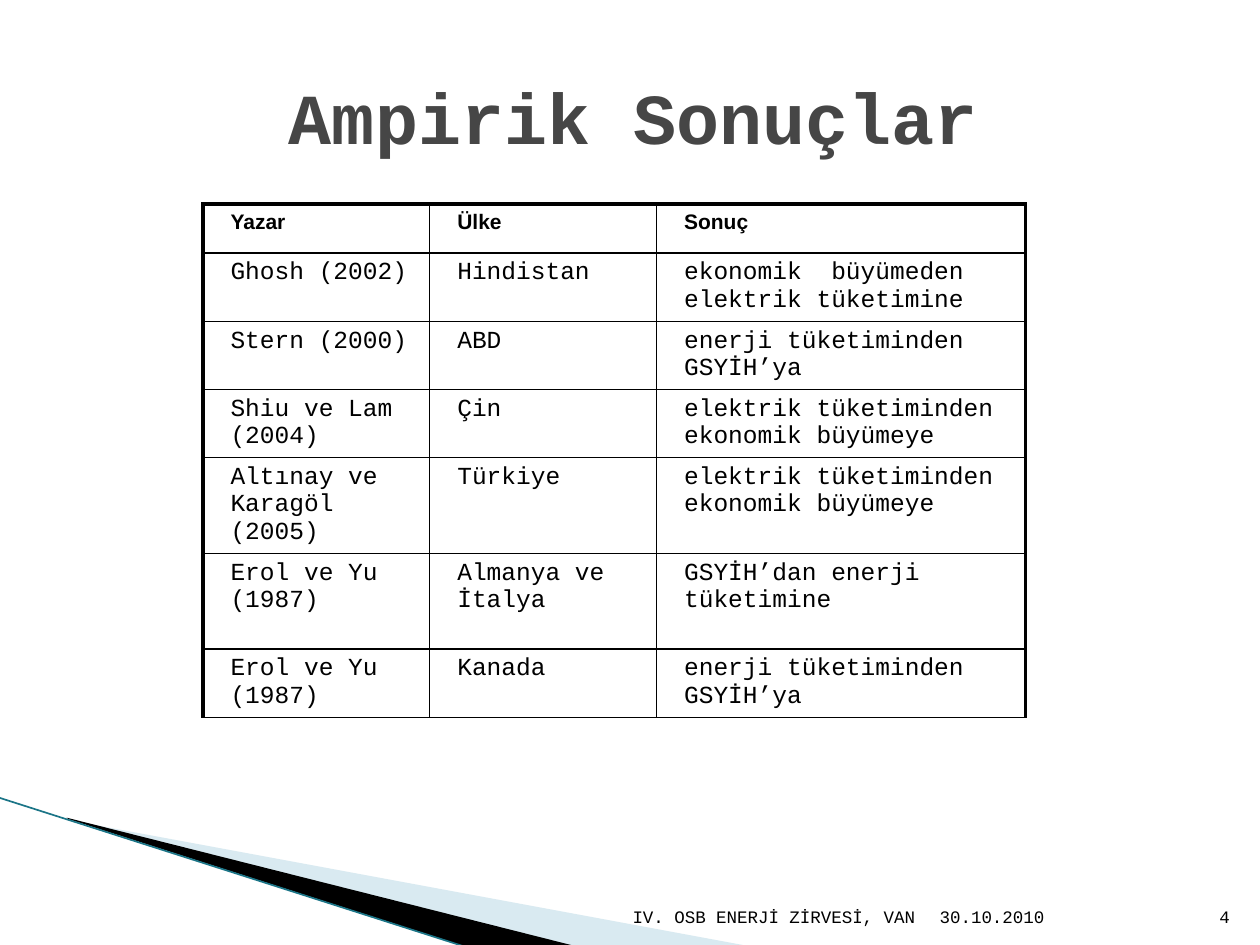
from dataclasses import dataclass, field

from lxml import etree
from pptx import Presentation
from pptx.dml.color import RGBColor
from pptx.enum.text import MSO_ANCHOR, PP_ALIGN
from pptx.oxml.ns import qn
from pptx.util import Inches, Pt

LEFT, MID, RIGHT = PP_ALIGN.LEFT, PP_ALIGN.CENTER, PP_ALIGN.RIGHT
CENTRE, BASE = MSO_ANCHOR.MIDDLE, MSO_ANCHOR.BOTTOM
BLACK = "000000"
MONO = {"name": "Courier New", "size": Pt(14), "bold": False}
HEAD = {"name": "Arial", "size": Pt(12), "bold": True}
SMALL = MONO | {"size": Pt(10)}
TITLE = MONO | {"size": Pt(41), "bold": True}
THIN, THICK = 1, 2.25


@dataclass
class Label:
    text: str
    box: tuple
    align: PP_ALIGN
    anchor: MSO_ANCHOR = BASE
    color: str = BLACK
    style: dict = field(default_factory=lambda: SMALL)


@dataclass
class Wedge:
    points: list
    color: str
    alpha: int = 100


LABELS = [
    Label("Ampirik Sonuçlar", (0.53, 0.29, 9, 1.25), MID, CENTRE, "464646", TITLE),
    Label("4", (9.46, 7.01, 0.4, 0.4), RIGHT),
    Label("IV. OSB ENERJİ ZİRVESİ, VAN", (4.79, 7.01, 2.57, 0.4), RIGHT),
    Label("30.10.2010", (7.36, 7.01, 2.1, 0.4), LEFT),
]
WEDGES = [
    Wedge([(0.55, 6.51), (5.95, 7.51), (4.56, 7.51), (0.55, 6.5)], "A0CBDC", 40),
    Wedge([(0.53, 6.49), (4.57, 7.51), (3.72, 7.52), (0.54, 6.5)], BLACK),
]
COLS = [1.8, 1.8, 2.93]
TALL = [0.39, 0.54, 0.54, 0.54, 0.76, 0.76, 0.54]
ROWS = [
    ("Yazar", "Ülke", "Sonuç"),
    ("Ghosh (2002)", "Hindistan", "ekonomik  büyümeden elektrik tüketimine"),
    ("Stern (2000)", "ABD", "enerji tüketiminden GSYİH’ya"),
    ("Shiu ve Lam (2004)", "Çin", "elektrik tüketiminden ekonomik büyümeye"),
    ("Altınay ve Karagöl (2005)", "Türkiye", "elektrik tüketiminden ekonomik büyümeye"),
    ("Erol ve Yu (1987)", "Almanya ve İtalya", "GSYİH’dan enerji tüketimine"),
    ("Erol ve Yu (1987)", "Kanada", "enerji tüketiminden GSYİH’ya"),
]


def paint(color, code: str) -> None:
    color.rgb = RGBColor.from_string(code)


def write(frame, text: str, style: dict, code: str = BLACK, align=LEFT) -> None:
    para = frame.paragraphs[0]
    para.alignment = align
    run = para.add_run()
    run.text = text
    for key, value in style.items():
        setattr(run.font, key, value)
    paint(run.font.color, code)


def add_label(slide, label: Label) -> None:
    frame = slide.shapes.add_textbox(*map(Inches, label.box)).text_frame
    frame.word_wrap = True
    frame.vertical_anchor = label.anchor
    write(frame, label.text, label.style, label.color, label.align)


def add_wedge(slide, wedge: Wedge) -> None:
    start, *rest = [(Inches(x), Inches(y)) for x, y in wedge.points]
    pen = slide.shapes.build_freeform(*start)
    pen.add_line_segments(rest)
    shape = pen.convert_to_shape()
    shape.shadow.inherit = False
    shape.fill.solid()
    paint(shape.fill.fore_color, wedge.color)
    shape.line.fill.background()
    if wedge.alpha < 100:
        tone = shape.fill._xPr.find(".//" + qn("a:srgbClr"))
        etree.SubElement(tone, qn("a:alpha"), val=str(wedge.alpha * 1000))


def add_edge(slide) -> None:
    ends = map(Inches, (-0.01, 6.33, 3.71, 7.52))
    line = slide.shapes.add_connector(1, *ends)
    line.line.width = Pt(0.95)
    paint(line.line.color, "1B7587")
    etree.SubElement(line._element.spPr, qn("a:effectLst"))


def add_rules(cell, widths: dict) -> None:
    props = cell._tc.get_or_add_tcPr()
    for spot, (side, width) in enumerate(widths.items()):
        rule = etree.Element(qn(f"a:ln{side}"), w=str(Pt(width)))
        fill = etree.SubElement(rule, qn("a:solidFill"))
        etree.SubElement(fill, qn("a:srgbClr"), val=BLACK)
        props.insert(spot, rule)


def add_grid(slide) -> None:
    box = map(Inches, (1.61, 1.62, sum(COLS), sum(TALL)))
    grid = slide.shapes.add_table(len(ROWS), len(COLS), *box).table
    grid.first_row = grid.horz_banding = False
    for col, width in zip(grid.columns, COLS):
        col.width = Inches(width)
    for r, (row, tall) in enumerate(zip(ROWS, TALL)):
        grid.rows[r].height = Inches(tall)
        for c, text in enumerate(row):
            cell = grid.cell(r, c)
            cell.margin_left = Inches(0.22)
            cell.fill.background()
            write(cell.text_frame, text, MONO if r else HEAD)
            add_rules(cell, {
                "L": THIN if c else THICK,
                "R": THICK if c == len(COLS) - 1 else THIN,
                "T": THIN if r else THICK,
                "B": THIN,
            })


def main() -> None:
    """Build the slide of empirical results and save it."""
    deck = Presentation()
    deck.slide_width, deck.slide_height = Inches(10), Inches(7.5)
    slide = deck.slides.add_slide(deck.slide_layouts[6])
    for wedge in WEDGES:
        add_wedge(slide, wedge)
    add_edge(slide)
    add_grid(slide)
    for label in LABELS:
        add_label(slide, label)
    deck.save("out.pptx")


if __name__ == "__main__":
    main()
